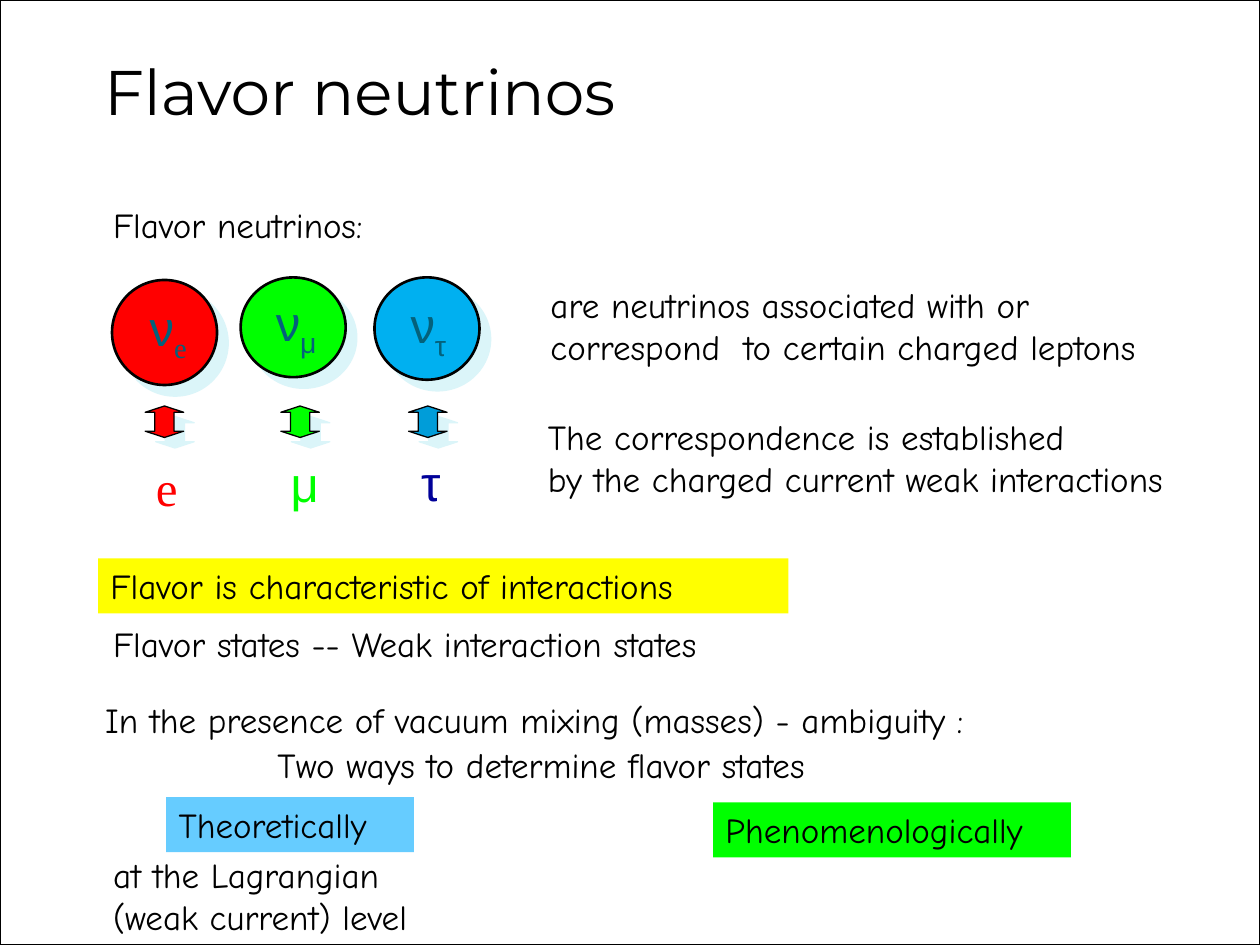
from collections import namedtuple
from dataclasses import dataclass

from lxml.etree import SubElement
from pptx import Presentation
from pptx.dml.color import RGBColor
from pptx.enum.shapes import MSO_SHAPE as Shape
from pptx.enum.text import PP_ALIGN as Align
from pptx.oxml.ns import qn
from pptx.util import Pt

Box = namedtuple("Box", "left top width height")
Span = namedtuple("Span", "text font baseline", defaults=(0,))
Flavor = namedtuple("Flavor", "box name font fill arrow_fill ink symbol_at arrow_x lepton_at")


@dataclass(frozen=True)
class Theme:
    """Colours, fonts and type sizes of the slide."""
    black: str = "000000"
    white: str = "FFFFFF"
    red: str = "FF0000"
    green: str = "00FF00"
    blue: str = "00B0F0"
    arrow_blue: str = "009DD9"
    navy: str = "000099"
    teal: str = "04617B"
    yellow: str = "FFFF00"
    sky: str = "66CCFF"
    shadow: str = "DBF5F9"
    title_font: str = "Montserrat"
    body_font: str = "Comic Neue"
    symbol_font: str = "Arial"
    serif_font: str = "Times New Roman"
    title: int = 36
    symbol: int = 28
    body: int = 20


THEME = Theme()


def inside(box, left, top, width, height):
    """Return a box placed relative to the corner of another box."""
    return Box(box.left + left, box.top + top, width, height)


def write(shape, lines, size, color, wrap=True, align=Align.LEFT):
    """Write lines of spans into a shape, one paragraph for each line."""
    frame = shape.text_frame
    frame.word_wrap = wrap
    for index, line in enumerate(lines):
        para = frame.add_paragraph() if index else frame.paragraphs[0]
        para.alignment = align
        for span in line:
            run = para.add_run()
            run.text = span.text
            for name, value in {"name": span.font, "size": Pt(size)}.items():
                setattr(run.font, name, value)
            run.font.color.rgb = RGBColor.from_string(color)
            if span.baseline:
                run.font._element.set("baseline", str(span.baseline * 1000))


def add_text(page, box, lines, size, color, **options):
    """Add a text box with lines of spans."""
    write(page.shapes.add_textbox(*map(Pt, box)), lines, size, color, **options)


def add_body(page, box, *texts, wrap=True):
    """Add body text, one paragraph for each text."""
    lines = [[Span(text, THEME.body_font)] for text in texts]
    add_text(page, box, lines, THEME.body, THEME.black, wrap=wrap)


def add_shape(page, kind, box, fill, line_width=0):
    """Add a filled shape, outlined in black if a line width is given."""
    shape = page.shapes.add_shape(kind, *map(Pt, box))
    shape.shadow.inherit = False
    shape.fill.solid()
    shape.fill.fore_color.rgb = RGBColor.from_string(fill)
    if line_width:
        shape.line.color.rgb = RGBColor.from_string(THEME.black)
        shape.line.width = Pt(line_width)
    else:
        shape.line.fill.background()
    return shape


def add_drop_shadow(shape):
    """Give a shape a hard pale shadow to the lower right."""
    effects = shape._element.spPr.find(qn("a:effectLst"))
    shadow = SubElement(effects, qn("a:outerShdw"), blurRad="0", dist=str(Pt(8.5)),
                        dir="2700000", algn="ctr", rotWithShape="0")
    SubElement(shadow, qn("a:srgbClr"), val=THEME.shadow)


def add_double_arrow(page, box, fill):
    """Add an up-down arrow with a half-width shaft and flat heads."""
    arrow = add_shape(page, Shape.UP_DOWN_ARROW, box, fill, 0.75)
    guides = arrow._element.spPr.find(qn("a:prstGeom")).find(qn("a:avLst"))
    for guide in list(guides):
        guides.remove(guide)
    for name, value in {"adj1": 50000, "adj2": 20000}.items():
        SubElement(guides, qn("a:gd"), name=name, fmla=f"val {value}")
    add_drop_shadow(arrow)


def add_banner(page, box, text, fill):
    """Add a coloured bar with one line of body text."""
    banner = add_shape(page, Shape.RECTANGLE, box, fill)
    write(banner, [[Span(text, THEME.body_font)]], THEME.body, THEME.black)


def add_flavor(page, flavor):
    """Add a neutrino circle, a double arrow and the charged lepton below."""
    box = flavor.box
    add_drop_shadow(add_shape(page, Shape.OVAL, box, flavor.fill, 1.5))
    spans = [Span("ν", THEME.symbol_font), Span(flavor.name, flavor.font, -25)]
    add_text(page, inside(box, *flavor.symbol_at, 38, 41), [spans],
             THEME.symbol, THEME.teal, wrap=False)
    arrow_top = 232 - box.top
    add_double_arrow(page, inside(box, flavor.arrow_x, arrow_top, 22, 18), flavor.arrow_fill)
    add_text(page, inside(box, *flavor.lepton_at, 27, 41),
             [[Span(flavor.name, flavor.font)]], THEME.symbol, flavor.ink, wrap=False)


def add_flavors(page, box):
    """Add the heading and the three neutrino flavors."""
    add_body(page, inside(box, 0, 0, 179, 32), "Flavor neutrinos:", wrap=False)
    flavors = [
        Flavor(inside(box, 6.5, 47.5, 60, 60), "e", THEME.serif_font, THEME.red,
               THEME.red, THEME.red, (14.4, 6.5), 19, (18, 98)),
        Flavor(inside(box, 80, 46, 60, 57), "μ", THEME.symbol_font, THEME.green,
               THEME.green, THEME.green, (13, 5), 23, (21.5, 97)),
        Flavor(inside(box, 156.5, 46, 60, 58.5), "τ", THEME.symbol_font, THEME.blue,
               THEME.arrow_blue, THEME.navy, (13.5, 6.5), 19.5, (19.5, 96.5)),
    ]
    for flavor in flavors:
        add_flavor(page, flavor)


def add_explanation(page, box):
    """Add the two remarks beside the flavors."""
    add_body(page, inside(box, 1.5, 0, 391, 55.5),
             "are neutrinos associated with or", "correspond  to certain charged leptons")
    add_body(page, inside(box, 0, 75.5, 410, 55.5),
             "The correspondence is established", "by the charged current weak interactions")


def add_conclusion(page, box):
    """Add the flavor statement and the two ways to determine states."""
    add_banner(page, inside(box, 3, 0, 394.5, 31.5),
               "Flavor is characteristic of interactions", THEME.yellow)
    add_body(page, inside(box, 4.5, 33, 428, 32), "Flavor states -- Weak interaction states")
    add_body(page, inside(box, 0, 76.5, 542, 32),
             "In the presence of vacuum mixing (masses) - ambiguity :")
    add_body(page, inside(box, 98.5, 102.5, 369, 32), "Two ways to determine flavor states")
    add_banner(page, inside(box, 42, 136.5, 141.5, 31.5), "Theoretically", THEME.sky)
    add_banner(page, inside(box, 354.5, 139.5, 204.5, 31.5), "Phenomenologically", THEME.green)
    add_body(page, inside(box, 4.5, 165, 203, 55.5),
             "at the Lagrangian", "(weak current) level")


def main():
    """Build the slide and save the deck."""
    deck = Presentation()
    deck.slide_width, deck.slide_height = Pt(720), Pt(540)
    page = deck.slides.add_slide(deck.slide_layouts[6])
    add_shape(page, Shape.RECTANGLE, Box(0, 0, 720, 540), THEME.white, 0.75)
    add_text(page, Box(47.5, 26.5, 316, 59), [[Span("Flavor neutrinos", THEME.title_font)]],
             THEME.title, THEME.black, wrap=False, align=Align.CENTER)
    add_flavors(page, Box(57.5, 112.5, 224, 182))
    add_explanation(page, Box(306, 158.5, 410, 131))
    add_conclusion(page, Box(53, 319, 559, 220.5))
    deck.save("out.pptx")


if __name__ == "__main__":
    main()
